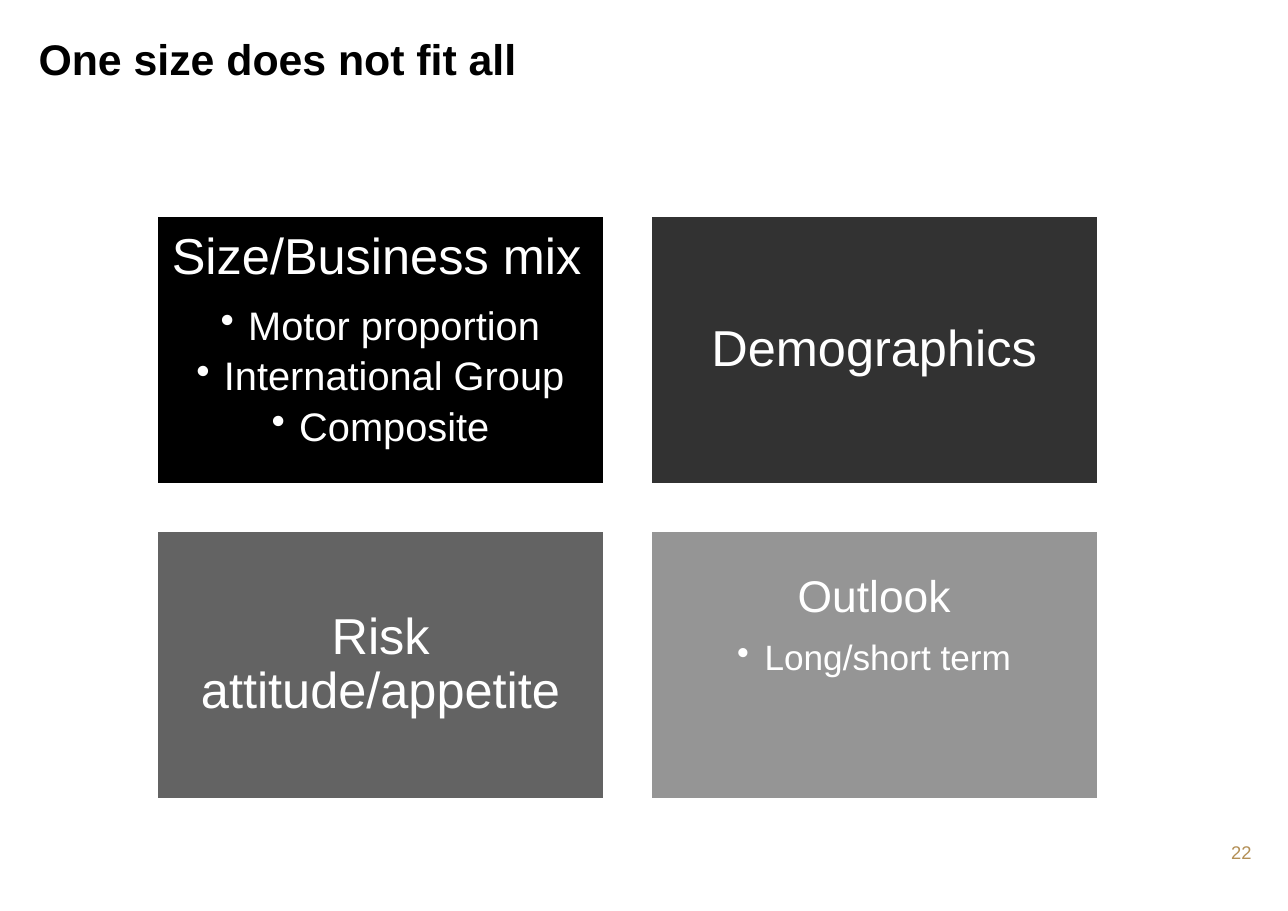
from lxml import etree
from pptx import Presentation
from pptx import util as u
from pptx.dml.color import RGBColor
from pptx.enum import shapes, text
from pptx.oxml import ns

PX = u.Inches(1) // 100
FONT = "Arial"
WHITE = "FFFFFF"
LEFT, CENTRE, RIGHT = text.PP_ALIGN.LEFT, text.PP_ALIGN.CENTER, text.PP_ALIGN.RIGHT
TOP, MIDDLE = text.MSO_ANCHOR.TOP, text.MSO_ANCHOR.MIDDLE

TITLE_BOX = (24, 24, 923, 138)
NUMBER_BOX = (1068, 762, 81, 24)
GRID_BOX = (142, 196, 855, 530)
CARD_WIDTH, CARD_HEIGHT = 407, 244
COLUMNS = 2

CARDS = [
    {"heading": "Size/Business mix", "fill": "000000", "align": LEFT, "anchor": TOP,
     "bullets": ["Motor proportion", "International Group", "Composite"], "bullet_size": 26},
    {"heading": "Demographics", "fill": "323232"},
    {"heading": "Risk attitude/appetite", "fill": "636363"},
    {"heading": "Outlook", "fill": "959595", "size": 29, "anchor": TOP,
     "margins": (7, 39, 7, 7), "bullets": ["Long/short term"], "bullet_size": 23},
]


def colour(value):
    return RGBColor.from_string(value)


def set_all(target, values):
    for name, value in values.items():
        setattr(target, name, value)


def place(shape, box):
    names = ("left", "top", "width", "height")
    set_all(shape, {name: length * PX for name, length in zip(names, box)})


def format_frame(frame, margins, anchor):
    """Set the margins as left, top, right, bottom in px."""
    names = ("margin_left", "margin_top", "margin_right", "margin_bottom")
    set_all(frame, {name: length * PX for name, length in zip(names, margins)})
    set_all(frame, {"word_wrap": True, "auto_size": text.MSO_AUTO_SIZE.NONE,
                    "vertical_anchor": anchor})


def write(paragraph, words, size, ink, align, bold=False):
    paragraph.text = words
    paragraph.alignment = align
    set_all(paragraph.runs[0].font, {"name": FONT, "size": u.Pt(size), "bold": bold})
    paragraph.runs[0].font.color.rgb = colour(ink)


def add_bullet(paragraph):
    properties = paragraph._p.get_or_add_pPr()
    properties.set("marL", str(25 * PX))
    properties.set("indent", str(-25 * PX))
    bullet = etree.SubElement(properties, ns.qn("a:buChar"))
    bullet.set("char", "•")


def add_title(slide, box):
    title = slide.shapes.title
    place(title, box)
    format_frame(title.text_frame, (11, 6, 11, 6), TOP)
    write(title.text_frame.paragraphs[0], "One size does not fit all", 28, "000000", LEFT, True)


def add_page_number(slide, box):
    number = slide.shapes.add_textbox(*(length * PX for length in box))
    format_frame(number.text_frame, (13, 6, 13, 6), MIDDLE)
    write(number.text_frame.paragraphs[0], "22", 12, "B38F55", RIGHT)


def add_card(slide, box, card):
    shape = slide.shapes.add_shape(shapes.MSO_SHAPE.RECTANGLE, *(length * PX for length in box))
    shape.shadow.inherit = False
    shape.fill.solid()
    shape.fill.fore_color.rgb = colour(card["fill"])
    shape.line.color.rgb = colour(WHITE)
    shape.line.width = u.Pt(2)

    frame = shape.text_frame
    format_frame(frame, card.get("margins", (14,) * 4), card.get("anchor", MIDDLE))
    heading = frame.paragraphs[0]
    size = card.get("size", 33)
    write(heading, card["heading"], size, WHITE, card.get("align", CENTRE))
    set_all(heading, {"line_spacing": 0.9, "space_after": u.Pt(round(size * 0.41, 1))})

    for words in card.get("bullets", []):
        paragraph = frame.add_paragraph()
        add_bullet(paragraph)
        size = card["bullet_size"]
        write(paragraph, words, size, WHITE, CENTRE)
        set_all(paragraph, {"level": 1, "line_spacing": 0.9,
                            "space_after": u.Pt(round(size * 0.18, 1))})


def add_card_grid(slide, box):
    """Spread the cards so that the outer ones touch the edges of the box."""
    left, top, width, height = box
    for index, card in enumerate(CARDS):
        row, column = divmod(index, COLUMNS)
        x = left + column * (width - CARD_WIDTH)
        y = top + row * (height - CARD_HEIGHT)
        add_card(slide, (x, y, CARD_WIDTH, CARD_HEIGHT), card)


def main():
    presentation = Presentation()
    set_all(presentation, {"slide_width": 1169 * PX, "slide_height": 827 * PX})
    slide = presentation.slides.add_slide(presentation.slide_layouts.get_by_name("Title Only"))
    add_title(slide, TITLE_BOX)
    add_page_number(slide, NUMBER_BOX)
    add_card_grid(slide, GRID_BOX)
    presentation.save("out.pptx")


if __name__ == "__main__":
    main()
